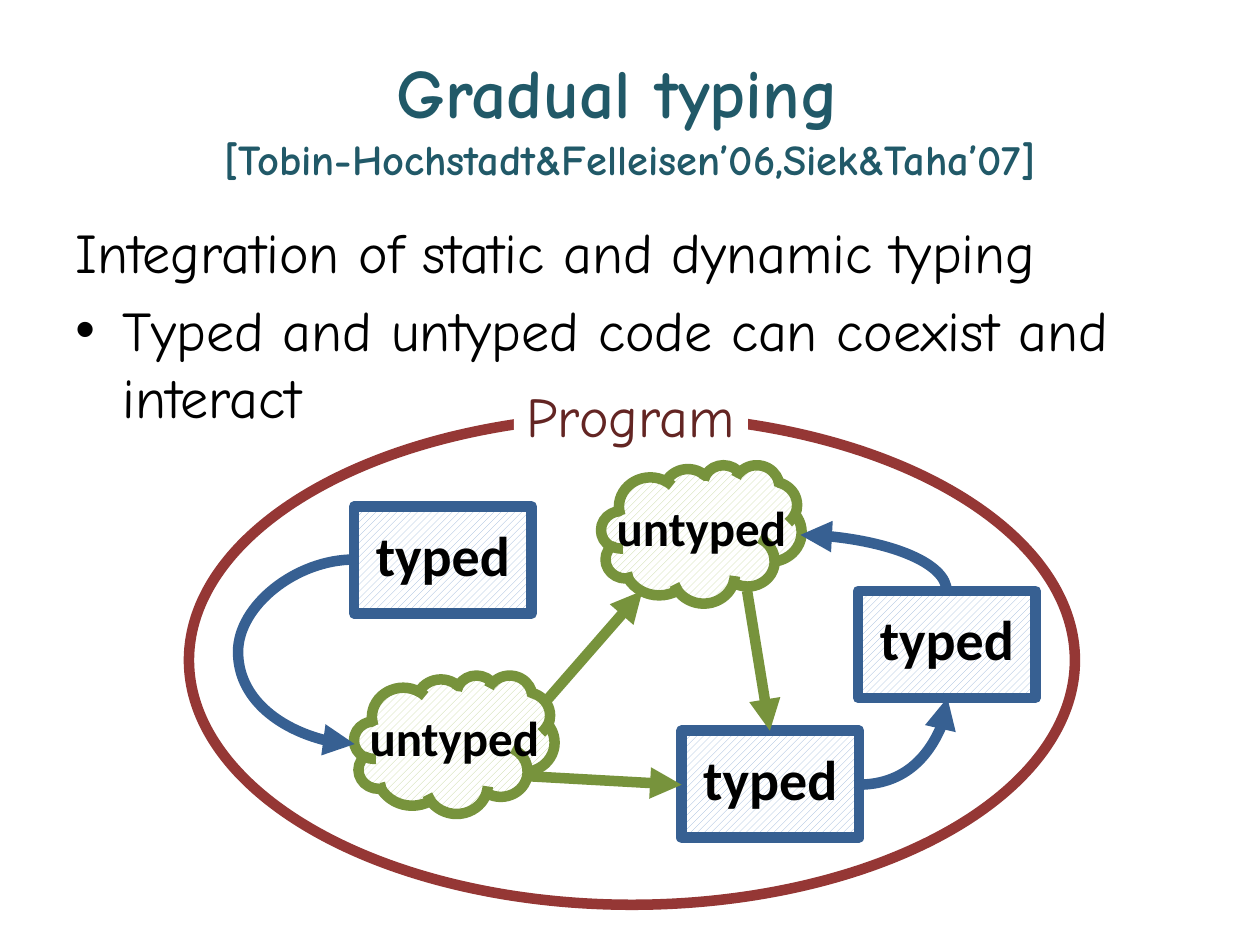
from lxml import etree
from pptx import Presentation
from pptx.dml.color import RGBColor
from pptx.enum.dml import MSO_PATTERN
from pptx.enum.shapes import MSO_CONNECTOR, MSO_SHAPE
from pptx.enum.text import MSO_ANCHOR, PP_ALIGN
from pptx.oxml.ns import qn
from pptx.util import Cm, Pt

LEFT, CENTER = PP_ALIGN.LEFT, PP_ALIGN.CENTER
TOP, MIDDLE = MSO_ANCHOR.TOP, MSO_ANCHOR.MIDDLE
RECTANGLE, OVAL, CLOUD = MSO_SHAPE.RECTANGLE, MSO_SHAPE.OVAL, MSO_SHAPE.CLOUD
STRAIGHT, CURVE = MSO_CONNECTOR.STRAIGHT, MSO_CONNECTOR.CURVE
HATCH = MSO_PATTERN.WIDE_UPWARD_DIAGONAL

COLORS = {
    "title": "215968", "text": "000000", "white": "FFFFFF",
    "program": "953735", "program text": "632523",
    "typed": "376092", "typed hatch": "95B3D7",
    "untyped": "77933C", "untyped hatch": "C3D69B",
}
KINDS = {
    "typed": dict(preset=RECTANGLE, size=(3.58, 2.16), label=(3.25, 1.63), drop=0.15, points=32),
    "untyped": dict(preset=CLOUD, size=(4.04, 2.79), label=(3.96, 1.45), drop=0.53, points=28),
}


def color(name):
    return RGBColor.from_string(COLORS[name])


def add_run(paragraph, text, size=32, font="Comic Neue", fill="text", bold=False, outline=None):
    run = paragraph.add_run()
    run.text = text
    run.font.size, run.font.name, run.font.bold = Pt(size), font, bold
    run.font.color.rgb = color(fill)
    if outline:
        line = etree.Element(qn("a:ln"), w=str(Pt(1)))
        solid = etree.SubElement(line, qn("a:solidFill"))
        etree.SubElement(solid, qn("a:srgbClr"), val=COLORS[outline])
        run.font._element.insert(0, line)


class ProgramSlide:
    """Draws the elements of a program diagram on one slide."""

    line_width = Pt(6)

    def __init__(self, slide):
        self.shapes = slide.shapes

    def text_box(self, left, top, width, height, anchor=TOP, align=LEFT, wrap=True):
        shape = self.shapes.add_textbox(Cm(left), Cm(top), Cm(width), Cm(height))
        frame = shape.text_frame
        frame.word_wrap, frame.vertical_anchor = wrap, anchor
        frame.paragraphs[0].alignment = align
        return frame

    def shape(self, preset, left, top, width, height, line=None):
        shape = self.shapes.add_shape(preset, Cm(left), Cm(top), Cm(width), Cm(height))
        shape.shadow.inherit = False
        shape.fill.background()
        if line:
            shape.line.color.rgb = color(line)
            shape.line.width = self.line_width
        else:
            shape.line.fill.background()
        return shape

    def module(self, kind, left, top):
        style = KINDS[kind]
        fill = self.shape(style["preset"], left, top, *style["size"], line=kind).fill
        fill.patterned()
        fill.pattern = HATCH
        fill.fore_color.rgb = color(kind + " hatch")
        fill.back_color.rgb = color("white")

    def label(self, kind, left, top):
        style = KINDS[kind]
        inset = (style["size"][0] - style["label"][0]) / 2
        frame = self.text_box(left + inset, top + style["drop"], *style["label"],
                              align=CENTER, wrap=False)
        add_run(frame.paragraphs[0], kind, size=style["points"], font="Calibri",
                bold=True, outline="white")

    def arrow(self, kind, start, end, preset=None, rotation=0, bend=None):
        connector = self.shapes.add_connector(
            CURVE if preset else STRAIGHT, *(Cm(value) for value in start + end))
        connector.line.color.rgb = color(kind)
        connector.line.width = self.line_width
        properties = connector._element.spPr
        etree.SubElement(properties.find(qn("a:ln")), qn("a:tailEnd"), type="triangle")
        etree.SubElement(properties, qn("a:effectLst"))
        if preset:
            geometry = properties.find(qn("a:prstGeom"))
            geometry.set("prst", preset)
            properties.find(qn("a:xfrm")).set("rot", str(rotation * 60000))
            if bend:
                guides = geometry.find(qn("a:avLst"))
                etree.SubElement(guides, qn("a:gd"), name="adj1", fmla=f"val {bend}")

    def title(self, heading, citation):
        frame = self.text_box(1.27, 0.76, 22.86, 3.18, anchor=MIDDLE, align=CENTER)
        paragraph = frame.paragraphs[0]
        add_run(paragraph, heading, size=39.6, fill="title", bold=True)
        paragraph.add_line_break()
        add_run(paragraph, citation, size=24.3, fill="title", bold=True)

    def body(self, statement, point):
        frame = self.text_box(1.27, 4.27, 22.86, 12.57)
        for text, bulleted in ((statement, False), (point, True)):
            paragraph = frame.add_paragraph() if bulleted else frame.paragraphs[0]
            paragraph.space_before = Pt(6)
            add_run(paragraph, text)
            if bulleted:
                properties = paragraph._p.get_or_add_pPr()
                properties.set("marL", str(Cm(0.95)))
                properties.set("indent", str(-Cm(0.95)))
                etree.SubElement(properties, qn("a:buFont"), typeface="Arial")
                etree.SubElement(properties, qn("a:buChar"), char="•")

    def program(self, name):
        self.shape(OVAL, 3.81, 8.38, 17.86, 9.86, line="program")
        caption = self.shape(RECTANGLE, 10.36, 7.57, 4.72, 1.63)
        caption.fill.solid()
        caption.fill.fore_color.rgb = color("white")
        frame = caption.text_frame
        frame.word_wrap, frame.vertical_anchor = False, TOP
        frame.paragraphs[0].alignment = LEFT
        add_run(frame.paragraphs[0], name, fill="program text")


def main():
    presentation = Presentation()
    presentation.slide_width, presentation.slide_height = Cm(25.4), Cm(19.05)
    drawing = ProgramSlide(presentation.slides.add_slide(presentation.slide_layouts[6]))

    drawing.title("Gradual typing ", "[Tobin-Hochstadt&Felleisen’06,Siek&Taha’07]")
    drawing.body("Integration of static and dynamic typing",
                 "Typed and untyped code can coexist and interact")
    drawing.program("Program")

    modules = [
        ("untyped", 12.12, 9.37), ("typed", 7.14, 10.21), ("typed", 17.3, 11.91),
        ("untyped", 7.14, 13.61), ("typed", 13.74, 14.73),
    ]
    for module in modules:
        drawing.module(*module)

    drawing.arrow("typed", (7.15, 15), (7.14, 11.28), "curvedConnector3", 180, -23400000)
    drawing.arrow("typed", (17.04, 12.83), (18.18, 9.88), "curvedConnector2", 270)
    drawing.arrow("untyped", (10.69, 15.65), (13.74, 15.82))
    drawing.arrow("untyped", (15.06, 11.91), (15.52, 14.73))
    drawing.arrow("untyped", (11.02, 14.12), (12.95, 11.91))
    drawing.arrow("typed", (17.3, 15.82), (19.1, 14.07), "curvedConnector2")

    for module in modules:
        drawing.label(*module)
    presentation.save("out.pptx")


if __name__ == "__main__":
    main()
